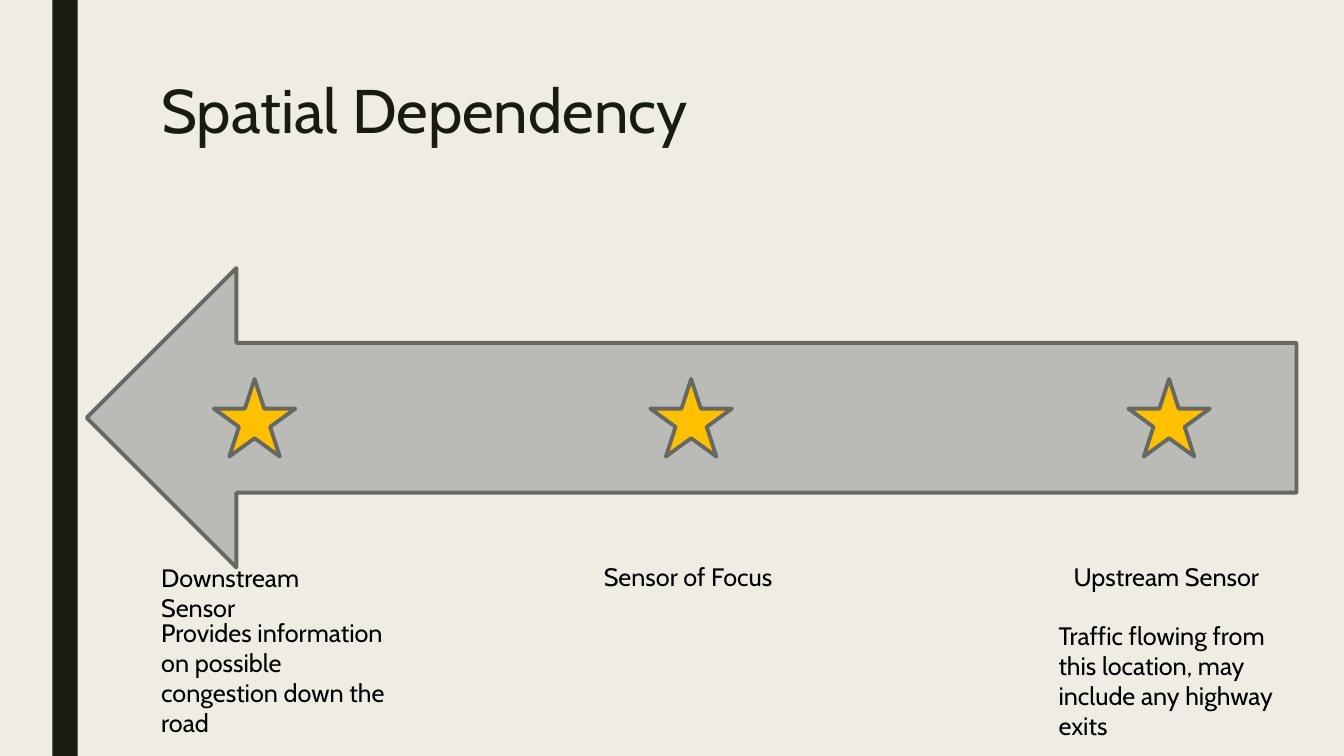
"""Builds the Spatial Dependency slide."""
from dataclasses import dataclass

from lxml.etree import SubElement
from pptx import Presentation
from pptx.dml.color import RGBColor
from pptx.enum.shapes import MSO_SHAPE
from pptx.enum.text import MSO_ANCHOR, MSO_AUTO_SIZE, PP_ALIGN
from pptx.oxml.ns import qn
from pptx.util import Pt

PX = 9144
SLIDE_WIDTH, SLIDE_HEIGHT = 1333, 750


@dataclass(frozen=True)
class Theme:
    """Colours, font and type sizes of the slide."""
    background: str = "EFEDE3"
    dark: str = "191B0E"
    text: str = "000000"
    road: str = "BABBB6"
    sensor: str = "FFC000"
    outline: str = "686863"
    font: str = "Cabin"
    title_size: int = 44
    body_size: int = 18
    outline_width: float = 2.75


THEME = Theme()


def emu(*lengths):
    """Turn px lengths into EMU."""
    return [length * PX for length in lengths]


def style_paragraph(paragraph, size, color):
    """Format the runs of a left-aligned paragraph."""
    paragraph.alignment = PP_ALIGN.LEFT
    for run in paragraph.runs:
        run.font.name = THEME.font
        run.font.size = Pt(size)
        run.font.color.rgb = RGBColor.from_string(color)


def add_figure(slide, preset, box, fill, outline=None):
    """Add a flat preset shape with an optional round-jointed outline."""
    figure = slide.shapes.add_shape(preset, *emu(*box))
    figure.shadow.inherit = False
    figure.fill.solid()
    figure.fill.fore_color.rgb = RGBColor.from_string(fill)
    if outline is None:
        figure.line.fill.background()
        return
    figure.line.color.rgb = RGBColor.from_string(outline)
    figure.line.width = Pt(THEME.outline_width)
    SubElement(figure._element.spPr.find(qn("a:ln")), qn("a:round"))


def add_title(slide, box, wording):
    """Place and format the title placeholder."""
    title = slide.shapes.title
    title.left, title.top, title.width, title.height = emu(*box)
    frame = title.text_frame
    frame.text = wording
    frame.word_wrap = True
    frame.auto_size = MSO_AUTO_SIZE.NONE
    frame.vertical_anchor = MSO_ANCHOR.TOP
    frame.paragraphs[0].line_spacing = 0.89
    style_paragraph(frame.paragraphs[0], THEME.title_size, THEME.dark)


def add_road(slide, box):
    """Draw the traffic arrow with its three sensors."""
    left, top, width, height = box
    add_figure(slide, MSO_SHAPE.LEFT_ARROW, box, THEME.road, THEME.outline)
    for offset in (126, 559, 1033):
        star = (left + offset, top + 110, 81, 77)
        add_figure(slide, MSO_SHAPE.STAR_5_POINT, star, THEME.sensor, THEME.outline)


def add_caption(slide, box, wording):
    """Add a wrapped text box."""
    frame = slide.shapes.add_textbox(*emu(*box)).text_frame
    frame.word_wrap = True
    frame.auto_size = MSO_AUTO_SIZE.SHAPE_TO_FIT_TEXT
    frame.text = wording
    style_paragraph(frame.paragraphs[0], THEME.body_size, THEME.text)


def add_captions(slide, box):
    """Name the sensors and describe the outer two."""
    left, top, width, height = box
    note_width, note_height = 245, 131
    captions = (
        ((left + 439, top, 194, 40), "Sensor of Focus"),
        ((left + 905, top, 208, 40), "Upstream Sensor"),
        ((left, top + 1, 233, 40), "Downstream Sensor"),
        ((left + width - note_width, top + 58, note_width, note_height),
         "Traffic flowing from this location, may include any highway exits"),
        ((left, top + 55, note_width, note_height),
         "Provides information on possible congestion down the road"),
    )
    for caption_box, wording in captions:
        add_caption(slide, caption_box, wording)


def main():
    """Build and save the slide."""
    deck = Presentation()
    deck.slide_width, deck.slide_height = emu(SLIDE_WIDTH, SLIDE_HEIGHT)
    slide = deck.slides.add_slide(deck.slide_layouts[5])
    slide.background.fill.solid()
    slide.background.fill.fore_color.rgb = RGBColor.from_string(THEME.background)
    add_figure(slide, MSO_SHAPE.RECTANGLE, (52, 0, 25, SLIDE_HEIGHT), THEME.dark)
    add_title(slide, (150, 75, 1050, 162), "Spatial Dependency")
    add_road(slide, (86, 266, 1200, 297))
    add_captions(slide, (150, 552, 1135, 189))
    deck.save("out.pptx")


if __name__ == "__main__":
    main()
